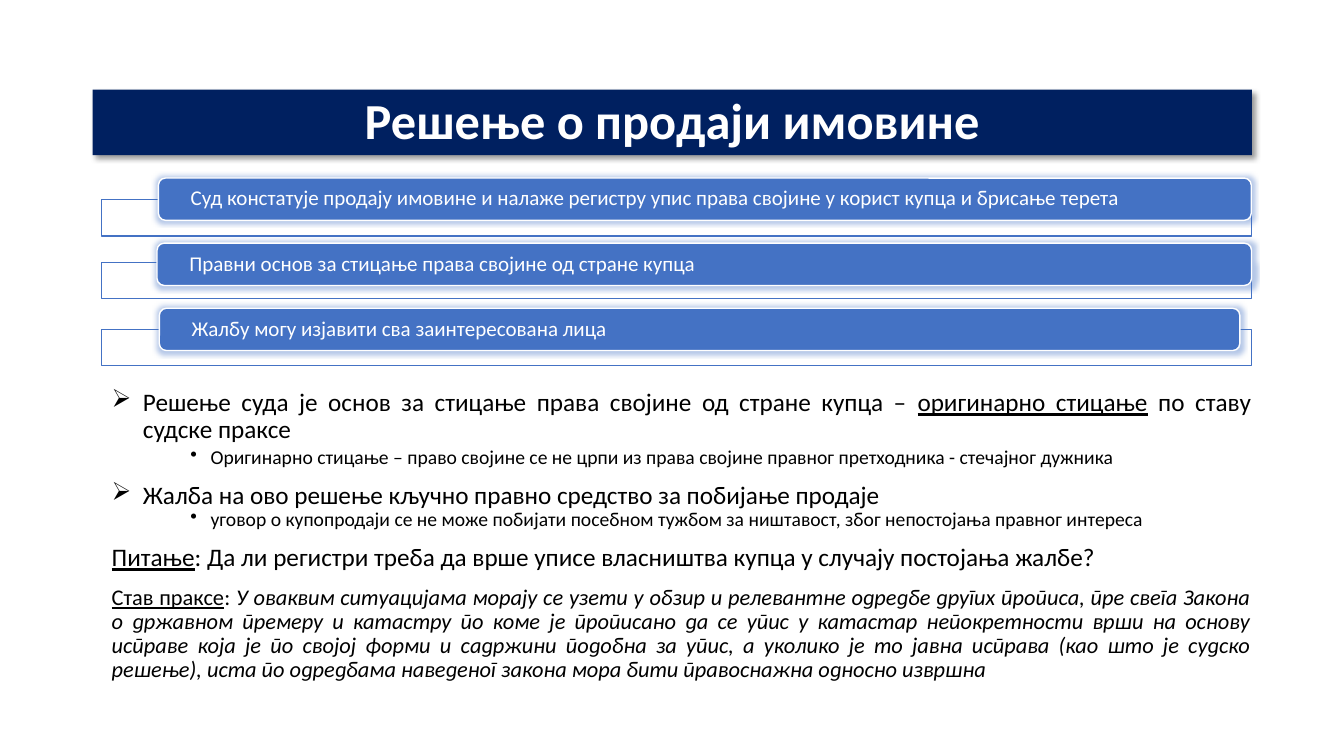
"""Builds the slide on the decision to sell assets."""
from dataclasses import dataclass

from lxml.etree import SubElement
from pptx import Presentation
from pptx.dml.color import RGBColor
from pptx.enum.shapes import MSO_SHAPE
from pptx.enum.text import MSO_ANCHOR, PP_ALIGN
from pptx.oxml import parse_xml
from pptx.oxml.ns import nsdecls, qn
from pptx.util import Pt


@dataclass(frozen=True)
class Theme:
    font: str = "Calibri"
    navy: RGBColor = RGBColor(0x00, 0x20, 0x60)
    blue: RGBColor = RGBColor(0x44, 0x72, 0xC4)
    white: RGBColor = RGBColor(0xFF, 0xFF, 0xFF)
    black: RGBColor = RGBColor(0x00, 0x00, 0x00)
    title: int = 36
    lead: int = 18
    ruling: int = 16
    bar: int = 15
    detail: int = 14


theme = Theme()


def add_text(paragraph, text, size, color=theme.black, bold=False, italic=False, underline=False):
    run = paragraph.add_run()
    run.text = text
    run.font.name = theme.font
    run.font.size = Pt(size)
    run.font.color.rgb = color
    run.font.bold = bold
    run.font.italic = italic
    run.font.underline = underline
    run._r.get_or_add_rPr().set("lang", "sr-Cyrl-RS")


def add_panel(preset, left, top, width, height, fill, line=None, effect=""):
    panel = slide.shapes.add_shape(preset, Pt(left), Pt(top), Pt(width), Pt(height))
    panel.fill.solid()
    panel.fill.fore_color.rgb = fill
    if line is None:
        panel.line.fill.background()
    else:
        panel.line.color.rgb = line
        panel.line.width = Pt(1)
    panel.shadow.inherit = False
    if effect:
        effects = panel._element.spPr.find(qn("a:effectLst"))
        effects.append(parse_xml(effect))
    panel.text_frame.word_wrap = True
    panel.text_frame.paragraphs[0].line_spacing = 0.9
    return panel


presentation = Presentation()
presentation.slide_width = Pt(960)
presentation.slide_height = Pt(540)
slide = presentation.slides.add_slide(presentation.slide_layouts[6])

explanation = slide.shapes.add_textbox(Pt(72.7), Pt(275), Pt(828), Pt(235)).text_frame
explanation.word_wrap = True
lead, detail, ruling = theme.lead, theme.detail, theme.ruling
arrow = ("➢", 22.3, -22.3)
dot = ("•", 70.6, -14.4)
points = [
    (arrow, 0, [
        ("Решење суда је основ за стицање права својине од стране купца – ", lead, {}),
        ("оригинарно стицање", lead, {"underline": True}),
        (" по ставу судске праксе", lead, {})]),
    (dot, 2, [
        ("Оригинарно стицање – право својине се не црпи из права својине "
         "правног претходника - стечајног дужника", detail, {})]),
    (arrow, 10, [
        ("Жалба на ово решење кључно правно средство за побијање продаје", lead, {})]),
    (dot, 0, [
        ("уговор о купопродаји се не може побијати посебном тужбом за ништавост, "
         "због непостојања правног интереса", detail, {})]),
    (None, 10, [
        ("Питање", lead, {"underline": True}),
        (": Да ли регистри треба да врше уписе власништва купца у случају "
         "постојања жалбе?", lead, {})]),
    (None, 10, [
        ("Став праксе", ruling, {"underline": True}),
        (": ", ruling, {}),
        ("У оваквим ситуацијама морају се узети у обзир и релевантне одредбе других "
         "прописа, пре свега Закона о државном премеру и катастру по коме је прописано "
         "да се упис у катастар непокретности врши на основу исправе која је по својој "
         "форми и садржини подобна за упис, а уколико је то јавна исправа (као што је "
         "судско решење), истa по одредбама наведеног закона мора бити правоснажна "
         "односно извршна", ruling, {"italic": True})]),
]
for index, (bullet, gap, phrases) in enumerate(points):
    point = explanation.add_paragraph() if index else explanation.paragraphs[0]
    point.alignment = PP_ALIGN.JUSTIFY
    point.line_spacing = 0.9
    point.space_before = Pt(gap)
    if bullet:
        symbol, margin, indent = bullet
        properties = point._p.get_or_add_pPr()
        properties.set("marL", str(Pt(margin)))
        properties.set("indent", str(Pt(indent)))
        SubElement(properties, qn("a:buChar")).set("char", symbol)
    for phrase, size, style in phrases:
        add_text(point, phrase, size, **style)

title_shadow = (
    f'<a:outerShdw {nsdecls("a")} blurRad="{Pt(4)}" dist="{Pt(3)}" dir="2700000" algn="tl" '
    'rotWithShape="0"><a:srgbClr val="000000"><a:alpha val="40000"/></a:srgbClr></a:outerShdw>')
title = add_panel(MSO_SHAPE.RECTANGLE, 66.2, 64.1, 828, 46.8, theme.navy, effect=title_shadow)
title.text_frame.vertical_anchor = MSO_ANCHOR.BOTTOM
heading = title.text_frame.paragraphs[0]
heading.alignment = PP_ALIGN.CENTER
add_text(heading, "Решење о продаји имовине", theme.title, theme.white, bold=True)

bar_glow = (
    f'<a:glow {nsdecls("a")} rad="{Pt(5)}"><a:srgbClr val="{theme.blue}">'
    '<a:alpha val="40000"/></a:srgbClr></a:glow>')
rulings = [
    (142.6, 113.2, 780.6,
     "Суд констатује продају имовине и налаже регистру упис права својине у корист купца "
     "и брисање терета"),
    (187.3, 112.2, 781.8, "Правни основ за стицање права својине од стране купца"),
    (235.4, 113.8, 771.8, "Жалбу могу изјавити сва заинтересована лица"),
]
for row, (frame_top, bar_left, bar_width, statement) in enumerate(rulings):
    add_panel(MSO_SHAPE.RECTANGLE, 72.7, frame_top, 821.3, 25.9, theme.white, theme.blue)
    bar = add_panel(MSO_SHAPE.ROUNDED_RECTANGLE, bar_left, 127.2 + 46.5 * row, bar_width, 30.2,
                    theme.blue, theme.white, bar_glow)
    bar_text = bar.text_frame
    bar_text.vertical_anchor = MSO_ANCHOR.MIDDLE
    bar_text.margin_left = bar_text.margin_right = Pt(21.6)
    bar_text.margin_top = bar_text.margin_bottom = 0
    bar_text.paragraphs[0].alignment = PP_ALIGN.LEFT
    add_text(bar_text.paragraphs[0], statement, theme.bar, theme.white)

presentation.save("out.pptx")
